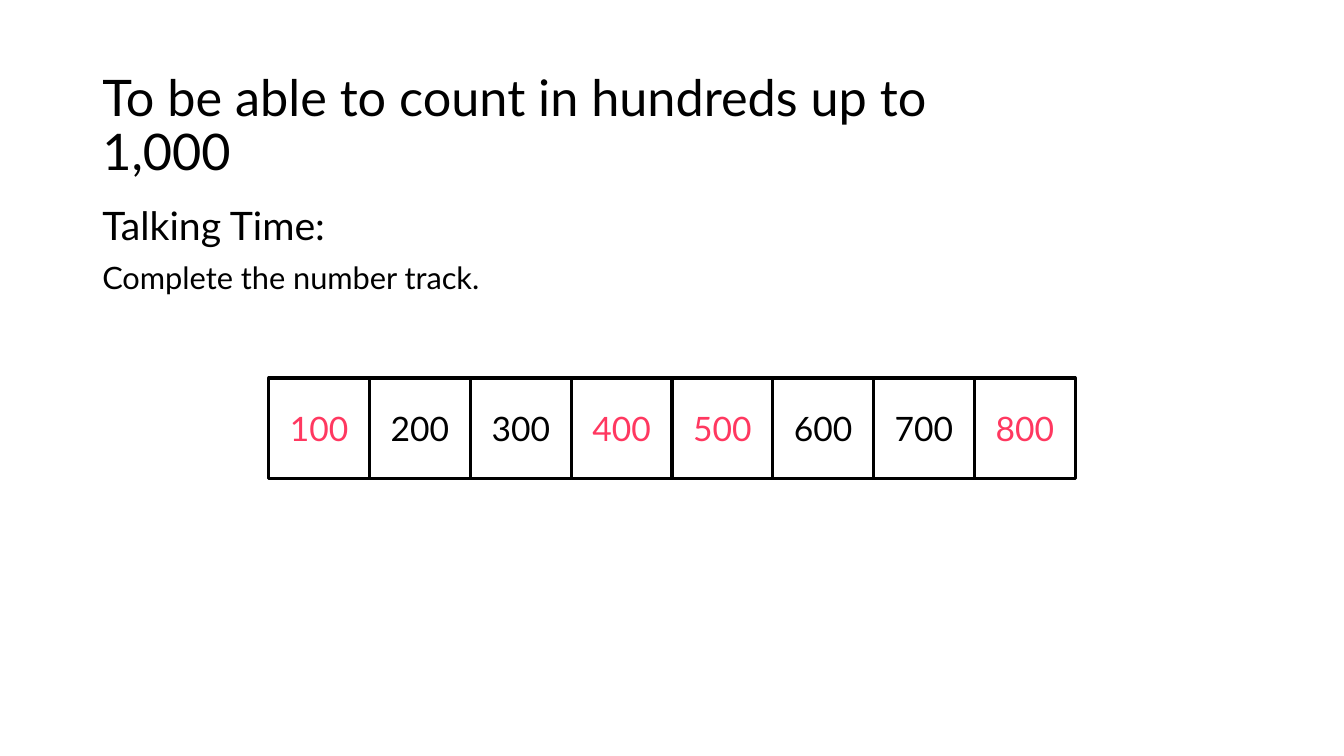
from dataclasses import dataclass

from pptx import Presentation
from pptx.dml.color import RGBColor
from pptx.enum.shapes import MSO_SHAPE
from pptx.enum.text import MSO_ANCHOR, PP_ALIGN
from pptx.util import Pt


@dataclass(frozen=True)
class Theme:
    font: str = "Lato"
    ink: RGBColor = RGBColor(0x00, 0x00, 0x00)
    answer: RGBColor = RGBColor(0xFF, 0x38, 0x60)
    paper: RGBColor = RGBColor(0xFF, 0xFF, 0xFF)
    title_size: float = 36
    heading_size: float = 28
    body_size: float = 22
    number_size: float = 24
    border: float = 2.25
    line_spacing: float = 0.9
    paragraph_gap: float = 10


class LessonSlide:
    def __init__(self, slide, theme):
        self.slide = slide
        self.theme = theme

    def style(self, paragraph, size, color):
        for run in paragraph.runs:
            run.font.name = self.theme.font
            run.font.size = Pt(size)
            run.font.color.rgb = color

    def text(self, left, top, width, height, lines, anchor=MSO_ANCHOR.TOP):
        """Add a text box with one paragraph for each (wording, size) pair."""
        box = self.slide.shapes.add_textbox(Pt(left), Pt(top), Pt(width), Pt(height))
        frame = box.text_frame
        frame.word_wrap = True
        frame.vertical_anchor = anchor
        frame.text = "\n".join(wording for wording, _ in lines)
        for index, (paragraph, (_, size)) in enumerate(zip(frame.paragraphs, lines)):
            paragraph.line_spacing = self.theme.line_spacing
            paragraph.space_before = Pt(self.theme.paragraph_gap if index else 0)
            self.style(paragraph, size, self.theme.ink)

    def square(self, left, top, side, number, color):
        square = self.slide.shapes.add_shape(
            MSO_SHAPE.RECTANGLE, Pt(left), Pt(top), Pt(side), Pt(side))
        square.shadow.inherit = False
        square.fill.solid()
        square.fill.fore_color.rgb = self.theme.paper
        square.line.color.rgb = self.theme.ink
        square.line.width = Pt(self.theme.border)
        frame = square.text_frame
        frame.vertical_anchor = MSO_ANCHOR.MIDDLE
        frame.text = str(number)
        label = frame.paragraphs[0]
        label.alignment = PP_ALIGN.CENTER
        self.style(label, self.theme.number_size, color)

    def number_track(self, left, top, side, numbers, answers):
        for index, number in enumerate(numbers):
            color = self.theme.answer if number in answers else self.theme.ink
            self.square(left + index * side, top, side, number, color)


def main():
    theme = Theme()
    presentation = Presentation()
    presentation.slide_width = Pt(960)
    presentation.slide_height = Pt(540)
    blank = presentation.slide_layouts[6]
    lesson = LessonSlide(presentation.slides.add_slide(blank), theme)

    lesson.text(66, 144, 828, 342.6, [
        ("Talking Time:", theme.heading_size),
        ("Complete the number track.", theme.body_size),
    ])
    lesson.text(66, 38.75, 691, 104.4, [
        ("To be able to count in hundreds up to 1,000", theme.title_size),
    ], MSO_ANCHOR.MIDDLE)
    lesson.number_track(192, 270, 72, range(100, 900, 100), {100, 400, 500, 800})

    presentation.save("out.pptx")


if __name__ == "__main__":
    main()
